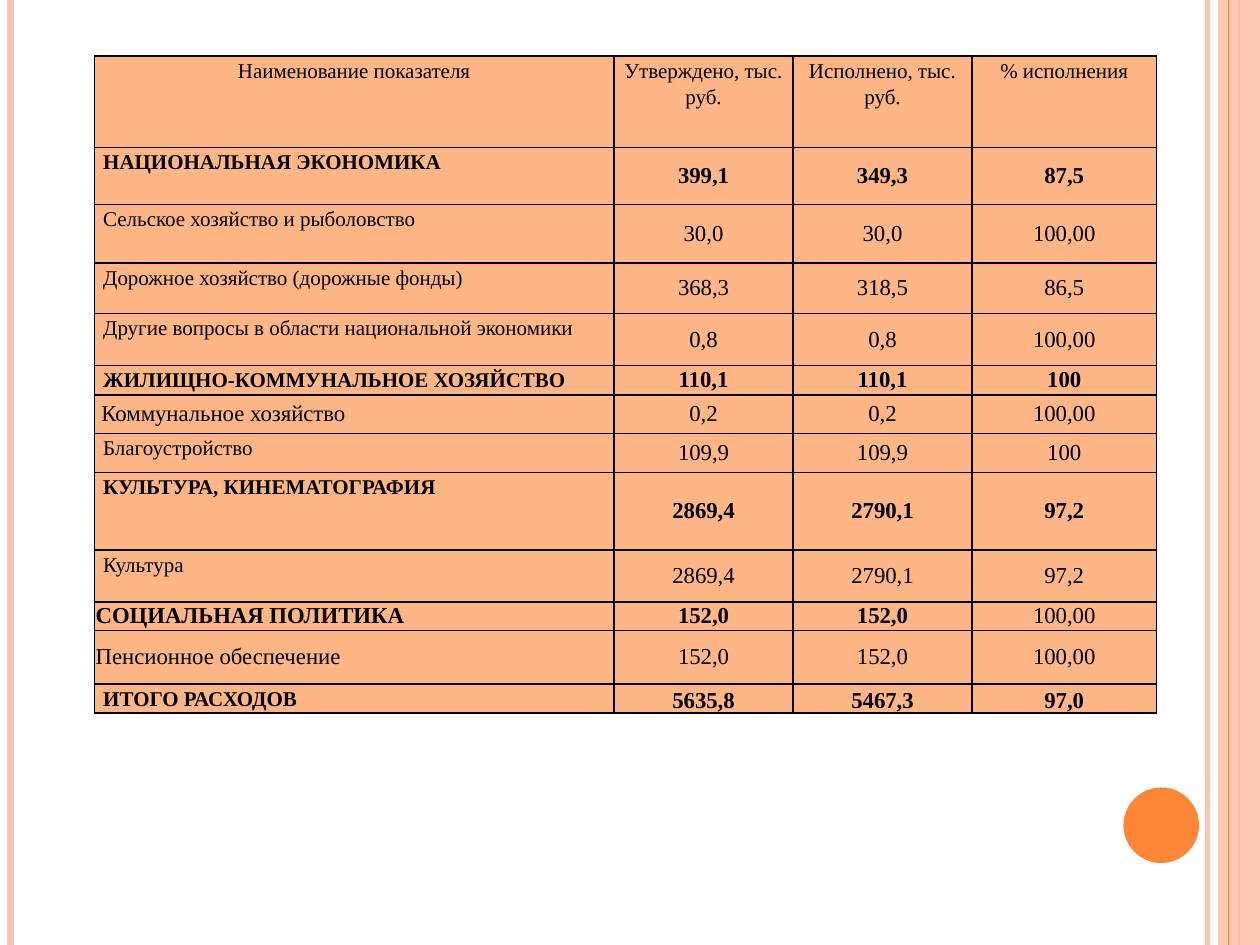
from pptx import Presentation
from pptx.dml.color import RGBColor
from pptx.enum.shapes import MSO_CONNECTOR, MSO_SHAPE
from pptx.enum.text import MSO_ANCHOR, PP_ALIGN
from pptx.oxml.ns import qn
from pptx.util import Pt
from lxml import etree

STRAIGHT = MSO_CONNECTOR.STRAIGHT
RECTANGLE, OVAL = MSO_SHAPE.RECTANGLE, MSO_SHAPE.OVAL
TOP, MIDDLE, BOTTOM = MSO_ANCHOR.TOP, MSO_ANCHOR.MIDDLE, MSO_ANCHOR.BOTTOM
LEFT, CENTER, JUSTIFY = PP_ALIGN.LEFT, PP_ALIGN.CENTER, PP_ALIGN.JUSTIFY
WIDTH, HEIGHT = 720, 540
BLANK_LAYOUT = 6

HEADINGS = ["Наименование показателя", "Утверждено, тыс. руб.", "Исполнено, тыс. руб.", "% исполнения"]
BUDGET = [
    ("НАЦИОНАЛЬНАЯ ЭКОНОМИКА", "399,1", "349,3", "87,5"),
    ("Сельское хозяйство и рыболовство", "30,0", "30,0", "100,00"),
    ("Дорожное хозяйство (дорожные фонды)", "368,3", "318,5", "86,5"),
    ("Другие вопросы в области национальной экономики", "0,8", "0,8", "100,00"),
    ("ЖИЛИЩНО-КОММУНАЛЬНОЕ ХОЗЯЙСТВО", "110,1", "110,1", "100"),
    ("Коммунальное хозяйство", "0,2", "0,2", "100,00"),
    ("Благоустройство", "109,9", "109,9", "100"),
    ("КУЛЬТУРА, КИНЕМАТОГРАФИЯ", "2869,4", "2790,1", "97,2"),
    ("Культура", "2869,4", "2790,1", "97,2"),
    ("СОЦИАЛЬНАЯ ПОЛИТИКА", "152,0", "152,0", "100,00"),
    ("Пенсионное обеспечение", "152,0", "152,0", "100,00"),
    ("ИТОГО РАСХОДОВ", "5635,8", "5467,3", "97,0"),
]
COLUMN_WIDTHS = [296.9, 102.3, 102.3, 105.4]
ROW_HEIGHTS = [52.3, 32.6, 33.4, 28.9, 29.7, 16.9, 22, 22.3, 44.3, 29.7, 16.3, 30.6, 16.6]
CENTRED_NAME_INSETS = {"Коммунальное хозяйство": 4, "СОЦИАЛЬНАЯ ПОЛИТИКА": 0.7, "Пенсионное обеспечение": 0.7}


def rgb(value):
    return RGBColor.from_string(value)


class BudgetSlide:
    """Draws the elements of one slide in a shared style."""

    font = "Times New Roman"
    ink, cell_fill, accent, pale = "000000", "FEB687", "FE8637", "FEC3AE"

    def __init__(self, slide):
        self.slide = slide

    def set_alpha(self, shape, percent):
        for color in shape._element.spPr.iter(qn("a:srgbClr")):
            etree.SubElement(color, qn("a:alpha"), val=str(percent * 1000))

    def stripe(self, x, color, weight, opacity=100):
        line = self.slide.shapes.add_connector(STRAIGHT, Pt(x), 0, Pt(x), Pt(HEIGHT))
        line.line.color.rgb = rgb(color)
        line.line.width = Pt(weight)
        etree.SubElement(line._element.spPr, qn("a:effectLst"))
        if opacity < 100:
            self.set_alpha(line, opacity)

    def shape(self, kind, left, top, width, height, color, opacity=100):
        shape = self.slide.shapes.add_shape(kind, Pt(left), Pt(top), Pt(width), Pt(height))
        shape.shadow.inherit = False
        shape.fill.solid()
        shape.fill.fore_color.rgb = rgb(color)
        shape.line.fill.background()
        if opacity < 100:
            self.set_alpha(shape, opacity)

    def table(self, left, top, widths, heights):
        frame = self.slide.shapes.add_table(
            len(heights), len(widths), Pt(left), Pt(top), Pt(sum(widths)), Pt(sum(heights)))
        table = frame.table
        table.first_row = table.horz_banding = False
        for column, width in zip(table.columns, widths):
            column.width = Pt(width)
        for row, height in zip(table.rows, heights):
            row.height = Pt(height)
        return table

    def cell(self, cell, text, size, align, anchor, inset, bold=False, spacing=1.0):
        cell.text_frame.text = text
        cell.vertical_anchor = anchor
        cell.margin_left = cell.margin_right = Pt(inset)
        cell.margin_top = cell.margin_bottom = 0
        paragraph = cell.text_frame.paragraphs[0]
        paragraph.alignment = align
        paragraph.line_spacing = spacing
        font = paragraph.runs[0].font
        font.name, font.size, font.bold = self.font, Pt(size), bold
        font.color.rgb = rgb(self.ink)
        self.borders(cell)
        cell.fill.solid()
        cell.fill.fore_color.rgb = rgb(self.cell_fill)

    def borders(self, cell):
        properties = cell._tc.get_or_add_tcPr()
        for side in ("a:lnL", "a:lnR", "a:lnT", "a:lnB"):
            line = etree.SubElement(properties, qn(side), w=str(Pt(1)))
            fill = etree.SubElement(line, qn("a:solidFill"))
            etree.SubElement(fill, qn("a:srgbClr"), val=self.ink)


def draw_frame(page):
    page.stripe(690, page.pale, 3, 93)
    page.stripe(6, page.pale, 4.5)
    page.stripe(708, page.accent, 1.5)
    page.shape(RECTANGLE, 696, 0, 24, HEIGHT, page.pale, 87)
    page.stripe(702, page.accent, 0.75)
    page.shape(OVAL, 642, 450, 43.2, 43.2, page.accent)


def draw_budget(page):
    table = page.table(54, 32, COLUMN_WIDTHS, ROW_HEIGHTS)
    for column, heading in enumerate(HEADINGS):
        page.cell(table.cell(0, column), heading, 12, CENTER, TOP, 1.4, spacing=1.15)
    for row, (name, *amounts) in enumerate(BUDGET, start=1):
        bold = name.isupper()
        if name in CENTRED_NAME_INSETS:
            page.cell(table.cell(row, 0), name, 13, LEFT, MIDDLE, CENTRED_NAME_INSETS[name], bold)
        else:
            page.cell(table.cell(row, 0), name, 12, JUSTIFY, TOP, 5, bold, 1.15)
        anchor = BOTTOM if row == len(BUDGET) else MIDDLE
        for column, amount in enumerate(amounts, start=1):
            page.cell(table.cell(row, column), amount, 13, CENTER, anchor, 0.7,
                      bold and amount != "100,00")


def main():
    presentation = Presentation()
    presentation.slide_width, presentation.slide_height = Pt(WIDTH), Pt(HEIGHT)
    page = BudgetSlide(presentation.slides.add_slide(presentation.slide_layouts[BLANK_LAYOUT]))
    draw_frame(page)
    draw_budget(page)
    presentation.save("out.pptx")


if __name__ == "__main__":
    main()
